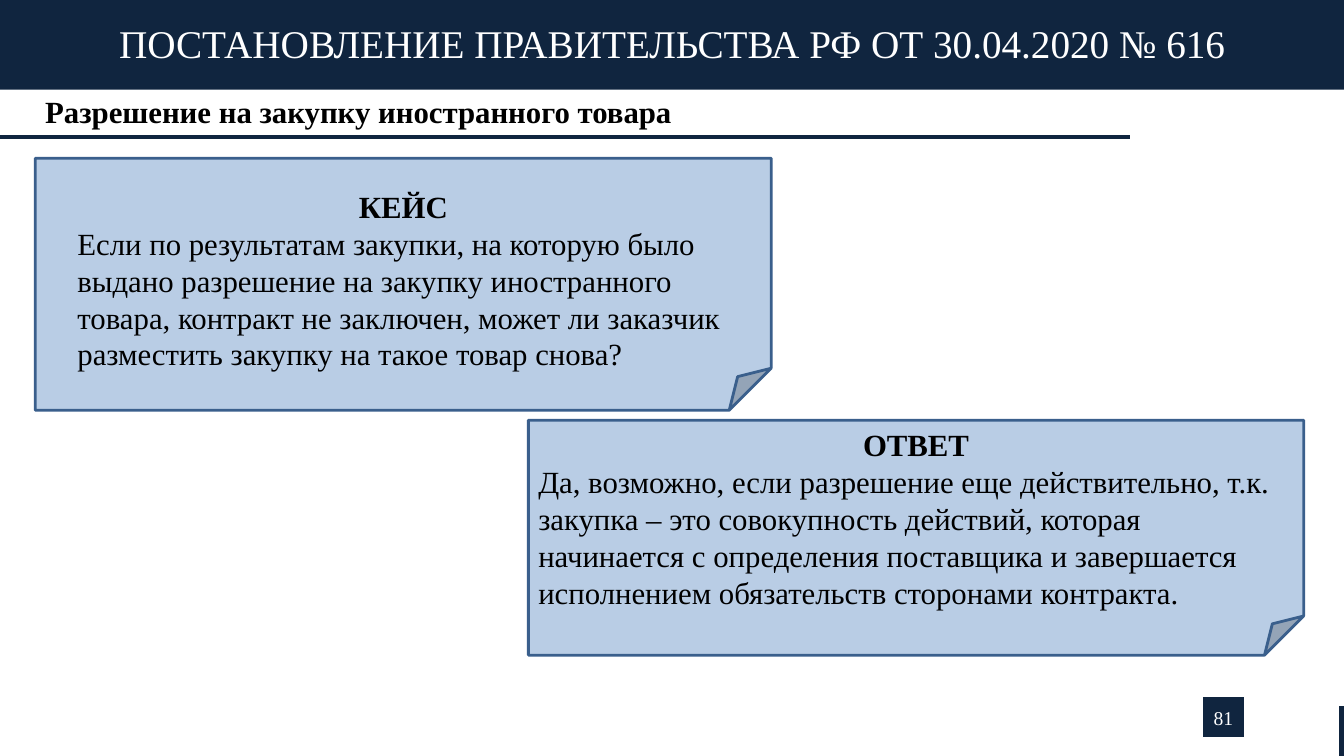
from lxml import etree
from pptx import Presentation
from pptx.dml.color import RGBColor
from pptx.enum import shapes, text
from pptx.oxml import ns
from pptx.util import Inches, Pt

NAVY, DARK_NAVY = "10253F", "0F243E"
NOTE_FILL, NOTE_LINE = "B9CDE5", "3A5F8C"
WHITE, BLACK = "FFFFFF", "000000"
CENTER, LEFT = text.PP_ALIGN.CENTER, text.PP_ALIGN.LEFT
TOP, MIDDLE = text.MSO_ANCHOR.TOP, text.MSO_ANCHOR.MIDDLE
RECTANGLE = shapes.MSO_SHAPE.RECTANGLE
FOLDED_CORNER = shapes.MSO_SHAPE.FOLDED_CORNER

CASE = (
    "Если по результатам закупки, на которую было выдано разрешение на закупку "
    "иностранного товара, контракт не заключен, может ли заказчик разместить "
    "закупку на такое товар снова?"
)
ANSWER = (
    "Да, возможно, если разрешение еще действительно, т.к. закупка – это "
    "совокупность действий, которая начинается с определения поставщика и "
    "завершается исполнением обязательств сторонами контракта."
)


def color(value):
    return RGBColor.from_string(value)


def write(shape, paragraphs, anchor=TOP):
    """Fill a shape with (text, alignment, font values) paragraphs."""
    frame = shape.text_frame
    frame.word_wrap = True
    frame.vertical_anchor = anchor
    for index, (words, alignment, values) in enumerate(paragraphs):
        para = frame.add_paragraph() if index else frame.paragraphs[0]
        para.alignment = alignment
        span = para.add_run()
        span.text = words
        span.font.color.rgb = color(values.get("color", BLACK))
        font_format = {
            "name": "Times New Roman",
            "size": Pt(values.get("size", 22)),
            "bold": values.get("bold", False),
        }
        for name, value in font_format.items():
            setattr(span.font, name, value)
    return frame


def add_block(page, kind, place, fill, line=None, width=0):
    shape = page.shapes.add_shape(kind, *map(Inches, place))
    shape.shadow.inherit = False
    shape.fill.solid()
    shape.fill.fore_color.rgb = color(fill)
    if line:
        shape.line.color.rgb = color(line)
        shape.line.width = Pt(width)
    else:
        shape.line.fill.background()
    return shape


def add_note(page, place):
    return add_block(page, FOLDED_CORNER, place, NOTE_FILL, NOTE_LINE, 2)


def add_text(page, place, paragraphs):
    return write(page.shapes.add_textbox(*map(Inches, place)), paragraphs)


def add_rule(page, start, end, line, width):
    rule = page.shapes.add_connector(
        shapes.MSO_CONNECTOR.STRAIGHT, *map(Inches, start + end))
    rule.line.color.rgb = color(line)
    rule.line.width = Pt(width)
    etree.SubElement(rule.element.spPr, ns.qn("a:effectLst"))


def headed(heading, body):
    return [(heading, CENTER, {"bold": True}), (body, LEFT, {})]


def main():
    deck = Presentation()
    deck.slide_width, deck.slide_height = Inches(13.33), Inches(7.5)
    page = deck.slides.add_slide(deck.slide_layouts[6])

    add_note(page, (0.35, 1.57, 7.3, 2.5))
    add_block(page, RECTANGLE, (0, 0, 13.33, 0.89), NAVY)
    add_text(page, (0, 0.14, 13.33, 0.57), [
        ("ПОСТАНОВЛЕНИЕ ПРАВИТЕЛЬСТВА РФ ОТ 30.04.2020 № 616", CENTER,
         {"size": 28, "color": WHITE})])
    subtitle = add_text(page, (0.35, 0.91, 11.2, 0.34), [
        ("Разрешение на закупку иностранного товара", LEFT, {"bold": True})])
    subtitle.paragraphs[0].line_spacing = 0.9
    add_rule(page, (0, 1.36), (11.21, 1.36), NAVY, 3)
    add_rule(page, (13.31, 7), (13.31, 7.5), DARK_NAVY, 4.5)

    add_text(page, (0.67, 1.81, 6.66, 1.95), headed("КЕЙС", CASE))
    answer = add_note(page, (5.24, 4.17, 7.69, 2.33))
    write(answer, headed("ОТВЕТ", ANSWER), MIDDLE)

    number = add_block(page, RECTANGLE, (11.93, 6.91, 0.41, 0.41), NAVY, WHITE, 0.5)
    frame = write(number, [("81", CENTER, {"size": 14, "color": WHITE})], MIDDLE)
    frame.margin_left = frame.margin_right = 0

    deck.save("out.pptx")


if __name__ == "__main__":
    main()
